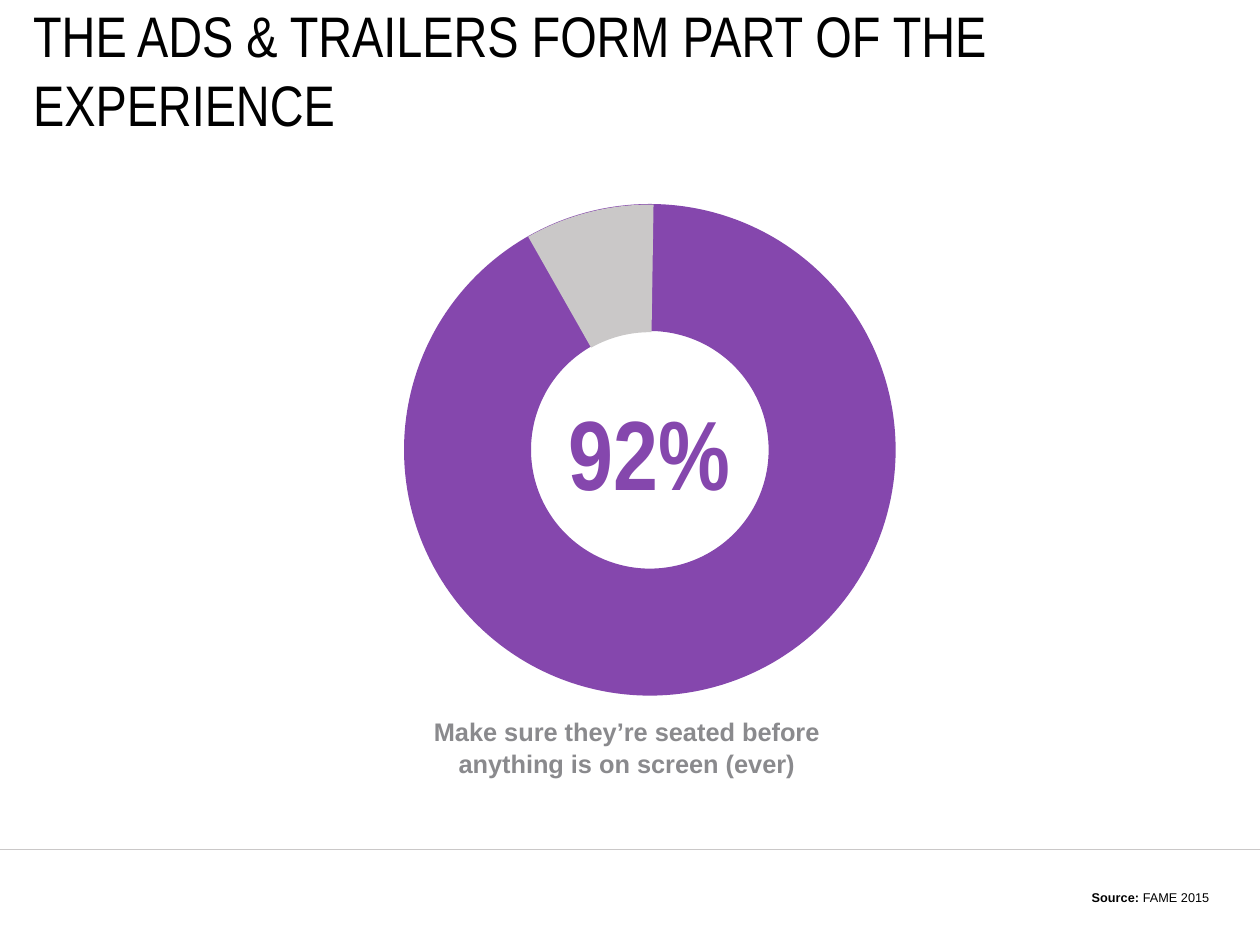
from dataclasses import dataclass

import pptx
import pptx.dml.color
import pptx.enum.shapes
import pptx.enum.text
import pptx.oxml
import pptx.oxml.ns
import pptx.util

Pt = pptx.util.Pt
Align = pptx.enum.text.PP_ALIGN
Anchor = pptx.enum.text.MSO_ANCHOR
Preset = pptx.enum.shapes.MSO_SHAPE


@dataclass(frozen=True)
class Theme:
    black: str = "000000"
    purple: str = "8547AD"
    light_grey: str = "CAC8C8"
    text_grey: str = "8A8A8D"
    body_font: str = "Arial"
    display_font: str = "Arial Narrow"
    title_size: float = 36
    figure_size: float = 62
    caption_size: float = 16
    source_size: float = 8


THEME = Theme()


@dataclass(frozen=True)
class Box:
    left: float
    top: float
    width: float
    height: float

    def lengths(self) -> list:
        return [Pt(value) for value in (self.left, self.top, self.width, self.height)]


@dataclass(frozen=True)
class Label:
    box: Box
    lines: tuple  # each line is a tuple of (text, bold) runs
    font: str
    size: float
    color: str
    align: Align = Align.CENTER
    anchor: Anchor = Anchor.MIDDLE
    insets: tuple = (7.2, 3.6)
    line_spacing: float | None = None


@dataclass(frozen=True)
class RingPart:
    box: Box
    preset: Preset
    fill: str | None = None
    line: str | None = None
    line_width: float = 0
    adjustments: tuple = ()


def rgb(color: str) -> pptx.dml.color.RGBColor:
    return pptx.dml.color.RGBColor.from_string(color)


def set_attributes(target, values: dict) -> None:
    for name, value in values.items():
        setattr(target, name, value)


def draw_label(slide, label: Label) -> None:
    frame = slide.shapes.add_textbox(*label.box.lengths()).text_frame
    side, end = (Pt(inset) for inset in label.insets)
    set_attributes(frame, {
        "word_wrap": True, "vertical_anchor": label.anchor,
        "margin_left": side, "margin_right": side,
        "margin_top": end, "margin_bottom": end,
    })
    paragraph = frame.paragraphs[0]
    paragraph.alignment = label.align
    if label.line_spacing:
        paragraph.line_spacing = Pt(label.line_spacing)
    for index, line in enumerate(label.lines):
        if index:
            paragraph.add_line_break()
        for text, bold in line:
            run = paragraph.add_run()
            run.text = text
            set_attributes(run.font, {
                "name": label.font, "size": Pt(label.size), "bold": bold,
            })
            run.font.color.rgb = rgb(label.color)


def draw_ring_part(slide, part: RingPart) -> None:
    shape = slide.shapes.add_shape(part.preset, *part.box.lengths())
    shape.shadow.inherit = False
    for index, value in enumerate(part.adjustments):
        shape.adjustments[index] = value
    if part.fill:
        shape.fill.solid()
        shape.fill.fore_color.rgb = rgb(part.fill)
    else:
        shape.fill.background()
    if part.line:
        shape.line.color.rgb = rgb(part.line)
        shape.line.width = Pt(part.line_width)
    else:
        shape.line.fill.background()


def draw_rule(slide, width: float, top: float) -> None:
    rule = slide.shapes.add_connector(
        pptx.enum.shapes.MSO_CONNECTOR.STRAIGHT, Pt(0), Pt(top), Pt(width), Pt(top))
    rule.line.color.rgb = rgb(THEME.light_grey)
    rule.line.width = Pt(0.5)
    properties = rule._element.spPr
    properties.append(pptx.oxml.parse_xml(
        f'<a:effectLst {pptx.oxml.ns.nsdecls("a")}/>'))


# 280 by 210 millimetres
SLIDE_WIDTH, SLIDE_HEIGHT = 793.7, 595.28

TITLE = Label(
    Box(20.88, 27.36, 732.96, 32.4),
    ((("THE ADS & TRAILERS FORM PART OF THE EXPERIENCE", False),),),
    THEME.display_font, THEME.title_size, THEME.black,
    align=Align.LEFT, insets=(0, 0))
CAPTION = Label(
    Box(165.6, 446.4, 462.96, 47.52),
    ((("Make sure they’re seated before ", True),),
     (("anything is on screen (ever) ", True),)),
    THEME.body_font, THEME.caption_size, THEME.text_grey, line_spacing=20)
SOURCE = Label(
    Box(346.32, 556.56, 422.64, 17.28),
    ((("Source: ", True), ("FAME 2015", False)),),
    THEME.body_font, THEME.source_size, THEME.black,
    align=Align.RIGHT, anchor=Anchor.BOTTOM)
FIGURE = Label(
    Box(329.04, 242.9, 159.84, 82.08), ((("92%", True),),),
    THEME.display_font, THEME.figure_size, THEME.purple)

# The thick outline makes the ring; the arc covers the remaining share
RING = (
    RingPart(Box(294.48, 168.48, 229.68, 229.68), Preset.OVAL,
             line=THEME.purple, line_width=80),
    RingPart(Box(254.16, 128.88, 310.32, 310.32), Preset.BLOCK_ARC,
             fill=THEME.light_grey, adjustments=(144.249, 162.524, 0.259)),
)


def main() -> None:
    presentation = pptx.Presentation()
    set_attributes(presentation, {
        "slide_width": Pt(SLIDE_WIDTH), "slide_height": Pt(SLIDE_HEIGHT),
    })
    slide = presentation.slides.add_slide(presentation.slide_layouts[6])

    # Footer rule
    draw_rule(slide, SLIDE_WIDTH, 534.96)

    # Title, caption and source
    for label in (TITLE, CAPTION, SOURCE):
        draw_label(slide, label)

    # Ring with its figure on top
    for part in RING:
        draw_ring_part(slide, part)
    draw_label(slide, FIGURE)

    presentation.save("out.pptx")


if __name__ == "__main__":
    main()
